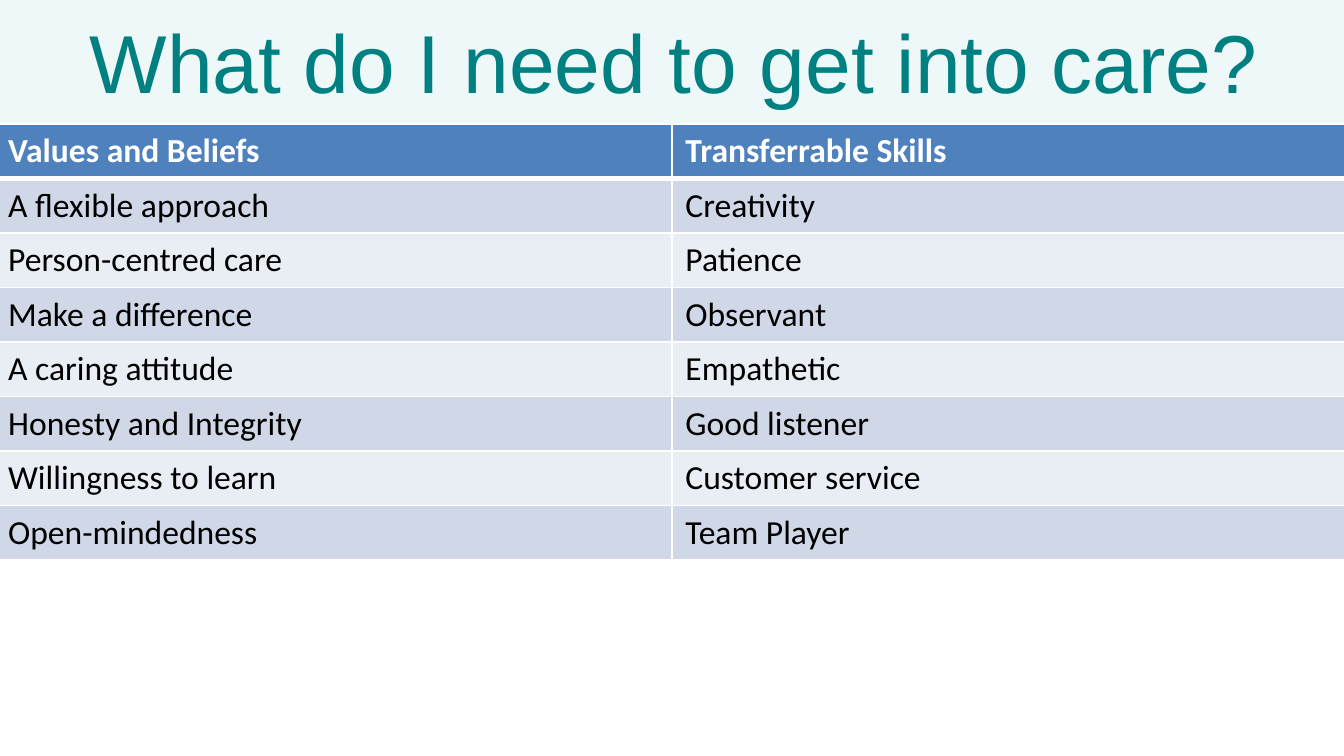
"""Build a slide listing the values and skills needed to get into care."""
from lxml.etree import SubElement
from pptx import Presentation
from pptx.dml.color import RGBColor
from pptx.enum.text import MSO_ANCHOR, PP_ALIGN
from pptx.oxml.ns import qn
from pptx.util import Cm, Pt

TEAL = RGBColor(0x00, 0x80, 0x80)
MINT = RGBColor(0xEE, 0xF8, 0xF8)
BLUE = RGBColor(0x4F, 0x81, 0xBD)
BAND_DARK = RGBColor(0xD0, 0xD8, 0xE8)
BAND_LIGHT = RGBColor(0xE9, 0xED, 0xF4)
WHITE = RGBColor(0xFF, 0xFF, 0xFF)
BLACK = RGBColor(0x00, 0x00, 0x00)

ROWS = [
    ("Values and Beliefs", "Transferrable Skills"),
    ("A flexible approach", "Creativity"),
    ("Person-centred care", "Patience"),
    ("Make a difference", "Observant"),
    ("A caring attitude", "Empathetic"),
    ("Honesty and Integrity", "Good listener"),
    ("Willingness to learn", "Customer service"),
    ("Open-mindedness", "Team Player"),
]


def add_border(cell, side, width):
    ln = SubElement(cell._tc.get_or_add_tcPr(), qn(f"a:ln{side}"), w=str(Pt(width)))
    SubElement(SubElement(ln, qn("a:solidFill")), qn("a:srgbClr"), val=str(WHITE))


prs = Presentation()
prs.slide_width, prs.slide_height = Cm(25.4), Cm(14.28)
s = prs.slides.add_slide(prs.slide_layouts[6])

title = s.shapes.add_textbox(Cm(-0.1), Cm(-0.05), Cm(25.7), Cm(2.39))
title.fill.solid()
title.fill.fore_color.rgb = MINT
tf = title.text_frame
tf.word_wrap = True
tf.vertical_anchor = MSO_ANCHOR.MIDDLE
p = tf.paragraphs[0]
p.text = "What do I need to get into care?"
p.alignment = PP_ALIGN.CENTER
p.font.name, p.font.size, p.font.color.rgb = "Arial", Pt(44), TEAL

row_height = Cm(1.03)
table = s.shapes.add_table(len(ROWS), 2, Cm(-0.1), Cm(2.34), Cm(25.6), row_height * len(ROWS)).table
for i, texts in enumerate(ROWS):
    table.rows[i].height = row_height
    header = i == 0
    for j, text in enumerate(texts):
        cell = table.cell(i, j)
        add_border(cell, "L", 1)
        add_border(cell, "R", 1)
        add_border(cell, "T", 3 if i == 1 else 1)
        add_border(cell, "B", 3 if header else 1)
        cell.fill.solid()
        cell.fill.fore_color.rgb = BLUE if header else BAND_DARK if i % 2 else BAND_LIGHT
        p = cell.text_frame.paragraphs[0]
        p.text = text
        p.font.name, p.font.size, p.font.bold = "Calibri", Pt(18), header
        p.font.color.rgb = WHITE if header else BLACK

prs.save("out.pptx")
